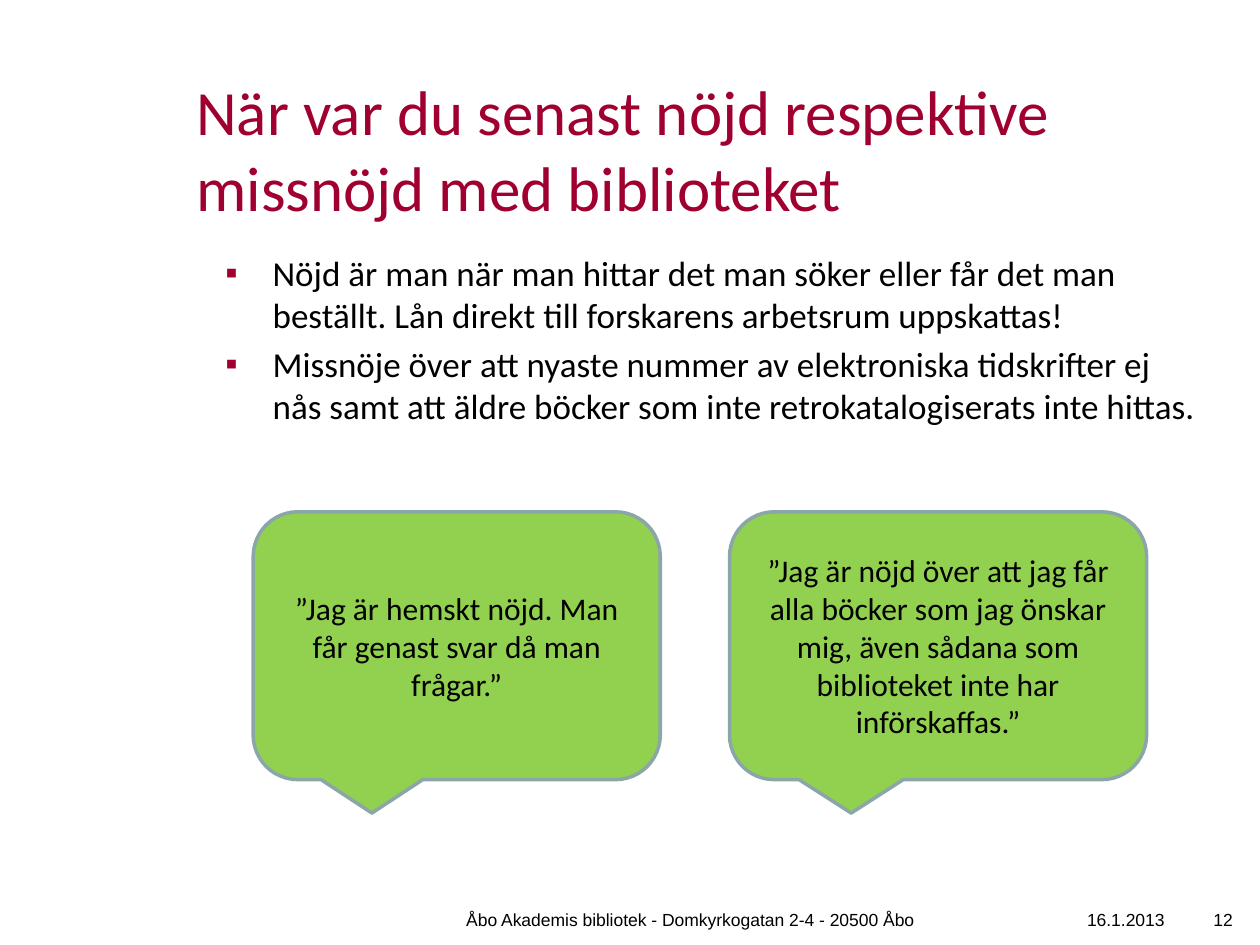
"""Builds the slide on when library users were last pleased or displeased."""
from lxml.etree import SubElement
from pptx import Presentation
from pptx.dml.color import RGBColor
from pptx.enum.shapes import MSO_SHAPE as Shape
from pptx.enum.text import MSO_ANCHOR as Anchor, MSO_AUTO_SIZE as AutoSize, PP_ALIGN as Align
from pptx.oxml.ns import qn
from pptx.util import Pt

RED, BLACK, GREEN, GREY = "A0002F", "000000", "92D050", "8AA6A8"


def color(value):
    return RGBColor.from_string(value)


def add_run(paragraph, text, size, font, value=BLACK, align=Align.LEFT):
    paragraph.alignment = align
    run = paragraph.add_run()
    run.text = text
    run.font.size = Pt(size)
    run.font.name = font
    run.font.color.rgb = color(value)


deck = Presentation()
deck.slide_width, deck.slide_height = Pt(720), Pt(540)
slide = deck.slides.add_slide(deck.slide_layouts[5])

title = slide.shapes.title
title.left, title.top, title.width, title.height = Pt(105), Pt(38), Pt(572.4), Pt(57)
title.text_frame.auto_size = AutoSize.NONE
title.text_frame.word_wrap = True
title.text_frame.vertical_anchor = Anchor.TOP
add_run(title.text_frame.paragraphs[0],
        "När var du senast nöjd respektive missnöjd med biblioteket", 36, "Calibri", RED)

findings = [
    "Nöjd är man när man hittar det man söker eller får det man beställt. "
    "Lån direkt till forskarens arbetsrum uppskattas!",
    "Missnöje över att nyaste nummer av elektroniska tidskrifter ej nås samt "
    "att äldre böcker som inte retrokatalogiserats inte hittas.",
]
body = slide.shapes.add_textbox(Pt(121.7), Pt(140), Pt(572.4), Pt(323)).text_frame
body.word_wrap = True
for index, finding in enumerate(findings):
    paragraph = body.add_paragraph() if index else body.paragraphs[0]
    props = paragraph._p.get_or_add_pPr()
    props.set("marL", str(Pt(27)))
    props.set("indent", str(-Pt(27)))
    bullet_color = SubElement(props, qn("a:buClr"))
    SubElement(bullet_color, qn("a:srgbClr"), val=RED)
    SubElement(props, qn("a:buFont"), typeface="Arial")
    SubElement(props, qn("a:buChar"), char="▪")
    if index:
        paragraph.space_before = Pt(4)
    add_run(paragraph, finding, 20, "Calibri")

footers = [
    ("16.1.2013", 604, 68.5, Align.RIGHT),
    ("Åbo Akademis bibliotek - Domkyrkogatan 2-4 - 20500 Åbo", 184.3, 420, Align.CENTER),
    ("12", 677.5, 34, Align.RIGHT),
]
for text, left, width, align in footers:
    footer = slide.shapes.add_textbox(Pt(left), Pt(516), Pt(width), Pt(15)).text_frame
    footer.word_wrap = True
    add_run(footer.paragraphs[0], text, 10, "Arial", align=align)

quotes = [
    ("”Jag är hemskt nöjd. Man får genast svar då man frågar.”", 144.7, 232.6),
    ("”Jag är nöjd över att jag får alla böcker som jag önskar mig, även sådana "
     "som biblioteket inte har införskaffas.”", 416.9, 238.3),
]
for text, left, width in quotes:
    quote = slide.shapes.add_shape(Shape.ROUNDED_RECTANGULAR_CALLOUT,
                                   Pt(left), Pt(292.5), Pt(width), Pt(153))
    quote.shadow.inherit = False
    quote.fill.solid()
    quote.fill.fore_color.rgb = color(GREEN)
    quote.line.color.rgb = color(GREY)
    quote.line.width = Pt(2)
    quote.text_frame.word_wrap = True
    quote.text_frame.vertical_anchor = Anchor.MIDDLE
    add_run(quote.text_frame.paragraphs[0], text, 18, "Calibri", align=Align.CENTER)

deck.save("out.pptx")
